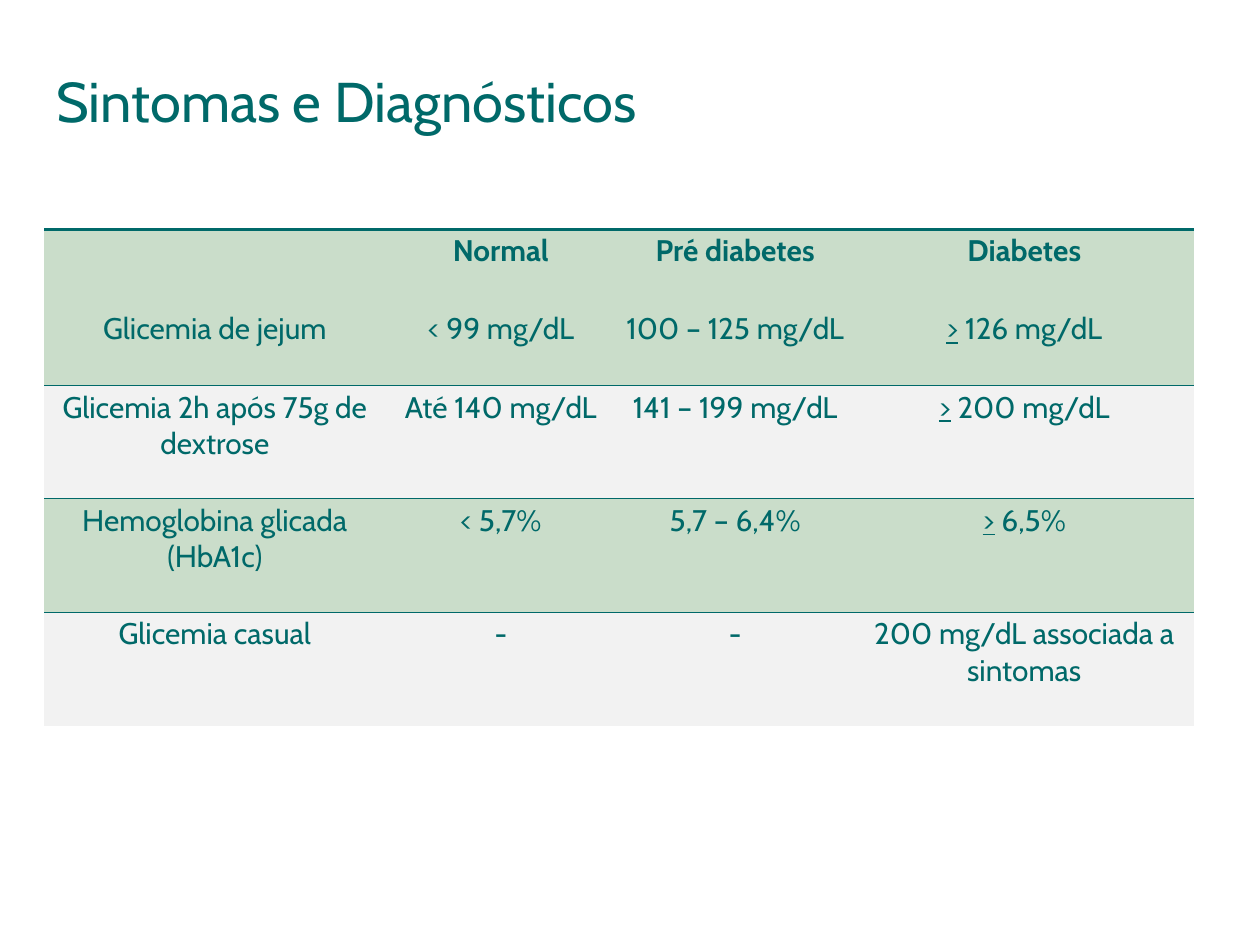
"""Build the slide on diabetes symptoms and diagnosis."""
from dataclasses import dataclass

from lxml.etree import SubElement
from pptx import Presentation
from pptx.dml.color import RGBColor
from pptx.enum.text import MSO_ANCHOR, PP_ALIGN
from pptx.oxml.ns import qn
from pptx.table import _Cell
from pptx.text.text import _Paragraph
from pptx.util import Inches, Pt

TEAL = RGBColor(0x00, 0x69, 0x69)
GREEN = RGBColor(0xCA, 0xDD, 0xCA)
GRAY = RGBColor(0xF2, 0xF2, 0xF2)
FONT = "Cabin"
NO_STYLE = "{2D5ABB26-0587-4C30-8999-92F81FD0307C}"
COLUMN_WIDTHS = (2.79, 1.75, 1.97, 2.62)


@dataclass
class Row:
    """One table row with its look."""
    texts: tuple[str, ...]
    height: float = 0.9
    fill: RGBColor = GREEN
    top_line: float = 0
    bold: bool = False


ROWS = (
    Row(("", "Normal", "Pré diabetes", "Diabetes"), 0.62, top_line=2.25, bold=True),
    Row(("Glicemia de jejum", "< 99 mg/dL", "100 – 125 mg/dL", "> 126 mg/dL"), 0.62),
    Row(("Glicemia 2h após 75g de dextrose", "Até 140 mg/dL", "141 – 199 mg/dL",
         "> 200 mg/dL"), fill=GRAY, top_line=0.5),
    Row(("Hemoglobina glicada (HbA1c)", "< 5,7%", "5,7 – 6,4%", "> 6,5%")),
    Row(("Glicemia casual", "-", "-", "200 mg/dL associada a sintomas"),
        fill=GRAY, top_line=0.5),
)


def add_run(p: _Paragraph, text: str, size: float, bold: bool = False,
            underline: bool = False) -> None:
    """Append a teal run to a paragraph."""
    r = p.add_run()
    r.text = text
    r.font.name = FONT
    r.font.size = Pt(size)
    r.font.color.rgb = TEAL
    r.font.bold = bold
    r.font.underline = underline


def set_top_line(cell: _Cell, width: float) -> None:
    """Draw a teal line on the top edge of a cell, or none at zero width."""
    tc_pr = cell._tc.get_or_add_tcPr()
    line = SubElement(tc_pr, qn("a:lnT"), w=str(Pt(width)))
    if width:
        SubElement(SubElement(line, qn("a:solidFill")), qn("a:srgbClr"), val=str(TEAL))
    else:
        SubElement(line, qn("a:noFill"))
    tc_pr.insert(0, line)


def fill_cell(cell: _Cell, text: str, row: Row) -> None:
    """Write and format one cell, underlining a leading greater-than sign."""
    cell.margin_left, cell.margin_right = Inches(0), Inches(0.08)
    cell.margin_top, cell.margin_bottom = Inches(0.03), Inches(0.25)
    cell.fill.solid()
    cell.fill.fore_color.rgb = row.fill
    set_top_line(cell, row.top_line)
    p = cell.text_frame.paragraphs[0]
    p.alignment = PP_ALIGN.CENTER
    if text.startswith(">"):
        add_run(p, ">", 17, row.bold, underline=True)
        text = text[1:]
    if text:
        add_run(p, text, 17, row.bold)


def main() -> None:
    """Create and save the presentation."""
    prs = Presentation()
    prs.slide_width, prs.slide_height = Inches(10), Inches(7.5)
    s = prs.slides.add_slide(prs.slide_layouts[6])

    tf = s.shapes.add_textbox(Inches(0.35), Inches(0.44), Inches(8.27), Inches(0.71)).text_frame
    tf.word_wrap = True
    tf.vertical_anchor = MSO_ANCHOR.MIDDLE
    add_run(tf.paragraphs[0], "Sintomas e Diagnósticos", 32)

    table = s.shapes.add_table(
        len(ROWS), len(COLUMN_WIDTHS), Inches(0.35), Inches(1.82),
        Inches(sum(COLUMN_WIDTHS)), Inches(sum(row.height for row in ROWS))).table
    table._tbl.tblPr.find(qn("a:tableStyleId")).text = NO_STYLE
    table.horz_banding = False
    for column, width in zip(table.columns, COLUMN_WIDTHS):
        column.width = Inches(width)
    for table_row, row in zip(table.rows, ROWS):
        table_row.height = Inches(row.height)
        for cell, text in zip(table_row.cells, row.texts):
            fill_cell(cell, text, row)

    prs.save("out.pptx")


if __name__ == "__main__":
    main()
